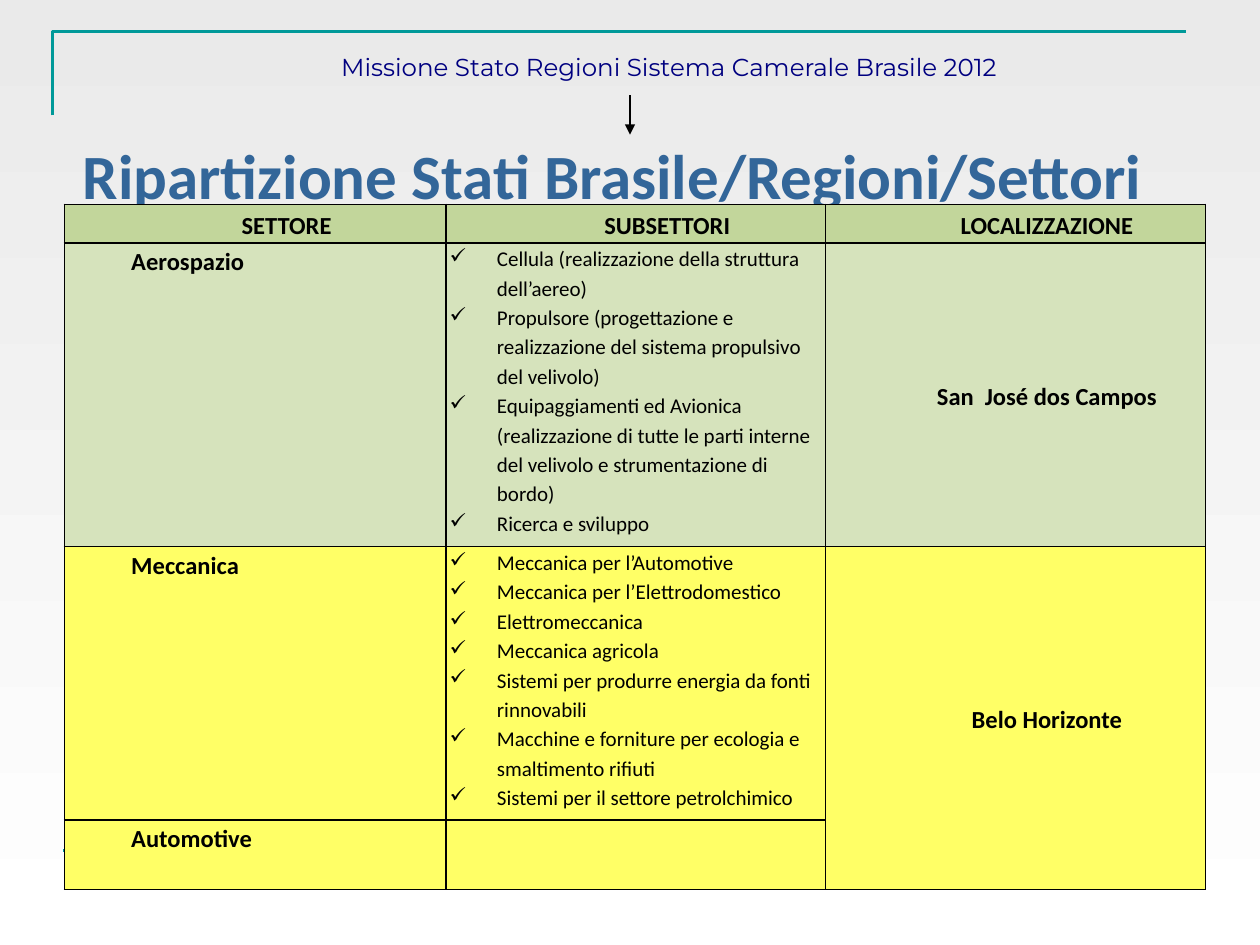
import dataclasses

import lxml.etree
import pptx
import pptx.dml.color
import pptx.enum.shapes
import pptx.enum.text
import pptx.oxml.ns
import pptx.util

Pt = pptx.util.Pt
Align = pptx.enum.text.PP_ALIGN
Anchor = pptx.enum.text.MSO_ANCHOR


@dataclasses.dataclass(frozen=True)
class Theme:
    body_font: str = "Calibri"
    heading_font: str = "Montserrat"
    title_size: int = 36
    label_size: int = 14
    item_size: int = 12
    background_top: str = "EAEAEA"
    background_bottom: str = "FFFFFF"
    frame: str = "009999"
    heading: str = "000080"
    title: str = "336699"
    ink: str = "000000"
    header_fill: str = "C2D69B"
    green_fill: str = "D6E3BC"
    yellow_fill: str = "FFFF66"


def color(value):
    return pptx.dml.color.RGBColor.from_string(value)


def add_xml(parent, tag, **attributes):
    return lxml.etree.SubElement(parent, pptx.oxml.ns.qn(tag), attributes)


class SlideBuilder:
    def __init__(self, slide, theme):
        self.slide = slide
        self.theme = theme

    def background(self):
        fill = self.slide.background.fill
        fill.gradient()
        fill.gradient_angle = 270
        stops = (self.theme.background_top, self.theme.background_bottom)
        for stop, value in zip(fill.gradient_stops, stops):
            stop.color.rgb = color(value)

    def run(self, paragraph, text, size, value, font=None, bold=False):
        run = paragraph.add_run()
        run.text = text
        run.font.name = font or self.theme.body_font
        run.font.size = Pt(size)
        run.font.bold = bold
        run.font.color.rgb = color(value)

    def place(self, shape, left, top, width, height):
        shape.left, shape.top = Pt(left), Pt(top)
        shape.width, shape.height = Pt(width), Pt(height)

    def title(self, text, *box):
        shape = self.slide.shapes.title
        self.place(shape, *box)
        frame = shape.text_frame
        frame.auto_size = pptx.enum.text.MSO_AUTO_SIZE.NONE
        frame.word_wrap = False
        frame.vertical_anchor = Anchor.MIDDLE
        frame.margin_left = frame.margin_right = 0
        frame.margin_top = frame.margin_bottom = 0
        paragraph = frame.paragraphs[0]
        paragraph.alignment = Align.CENTER
        self.run(paragraph, text, self.theme.title_size, self.theme.title, bold=True)

    def heading(self, text, *box):
        shape = self.slide.shapes.add_textbox(*map(Pt, box))
        shape.text_frame.word_wrap = True
        paragraph = shape.text_frame.paragraphs[0]
        paragraph.alignment = Align.CENTER
        self.run(paragraph, text, self.theme.label_size, self.theme.heading,
                 self.theme.heading_font)

    def corner(self, start, *points):
        builder = self.slide.shapes.build_freeform(*map(Pt, start))
        builder.add_line_segments([tuple(map(Pt, point)) for point in points], close=False)
        shape = builder.convert_to_shape()
        shape.shadow.inherit = False
        shape.fill.background()
        shape.line.color.rgb = color(self.theme.frame)
        shape.line.width = Pt(1.5)

    def line(self, start, end, value, width, arrow=False):
        connector = self.slide.shapes.add_connector(
            pptx.enum.shapes.MSO_CONNECTOR.STRAIGHT, *map(Pt, start + end))
        connector.line.color.rgb = color(value)
        connector.line.width = Pt(width)
        if arrow:
            add_xml(connector.line._get_or_add_ln(), "a:tailEnd", type="triangle")
        add_xml(connector._element.spPr, "a:effectLst")

    def table(self, left, top, columns, rows):
        frame = self.slide.shapes.add_table(
            len(rows), len(columns), Pt(left), Pt(top), Pt(sum(columns)), Pt(sum(rows)))
        table = frame.table
        table.first_row = table.horz_banding = False
        for column, width in zip(table.columns, columns):
            column.width = Pt(width)
        for row, height in zip(table.rows, rows):
            row.height = Pt(height)
        return table

    def style_cell(self, cell, fill):
        properties = cell._tc.get_or_add_tcPr()
        for side in ("a:lnL", "a:lnR", "a:lnT", "a:lnB"):
            border = add_xml(properties, side, w=str(Pt(1)))
            add_xml(add_xml(border, "a:solidFill"), "a:srgbClr", val=self.theme.ink)
        cell.fill.solid()
        cell.fill.fore_color.rgb = color(fill)
        cell.margin_left = cell.margin_right = Pt(2.2)
        cell.margin_top = cell.margin_bottom = 0

    def indent(self, paragraph, margin, first):
        paragraph.line_spacing = 1.15
        properties = paragraph._p.get_or_add_pPr()
        properties.set("marL", str(Pt(margin)))
        properties.set("indent", str(Pt(first)))
        return properties

    def label(self, cell, text, centered=False):
        paragraph = cell.text_frame.paragraphs[0]
        self.indent(paragraph, 36, 0)
        if centered:
            paragraph.alignment = Align.CENTER
            cell.vertical_anchor = Anchor.MIDDLE
        self.run(paragraph, text, self.theme.label_size, self.theme.ink, bold=True)

    def checklist(self, cell, items):
        frame = cell.text_frame
        for index, item in enumerate(items):
            paragraph = frame.add_paragraph() if index else frame.paragraphs[0]
            add_xml(self.indent(paragraph, 27, -27), "a:buChar", char="✓")
            self.run(paragraph, item, self.theme.item_size, self.theme.ink)


HEADERS = ("SETTORE", "SUBSETTORI", "LOCALIZZAZIONE")
SECTORS = (
    ("Aerospazio", (
        "Cellula (realizzazione della struttura dell’aereo)",
        "Propulsore (progettazione e realizzazione del sistema propulsivo del velivolo)",
        "Equipaggiamenti ed Avionica (realizzazione di tutte le parti interne "
        "del velivolo e strumentazione di bordo)",
        "Ricerca e sviluppo"), "San  José dos Campos"),
    ("Meccanica", (
        "Meccanica per l’Automotive",
        "Meccanica per l’Elettrodomestico",
        "Elettromeccanica",
        "Meccanica agricola",
        "Sistemi per produrre energia da fonti rinnovabili",
        "Macchine e forniture per ecologia e smaltimento rifiuti",
        "Sistemi per il settore petrolchimico"), "Belo Horizonte"),
    ("Automotive", (), None),
)


def main():
    presentation = pptx.Presentation()
    presentation.slide_width, presentation.slide_height = Pt(720), Pt(540)
    theme = Theme()
    slide = presentation.slides.add_slide(presentation.slide_layouts[5])
    builder = SlideBuilder(slide, theme)

    builder.background()
    builder.corner((30, 66), (30, 18), (678, 18))
    builder.line((36, 486), (684, 486), theme.frame, 1.5)
    builder.heading("Missione Stato Regioni Sistema Camerale Brasile 2012", 127.5, 26, 510, 22)
    builder.line((360, 54.5), (360, 77), theme.ink, 0.75, arrow=True)
    builder.title("Ripartizione Stati Brasile/Regioni/Settori", 40, 77.8, 620, 44)

    table = builder.table(36.8, 116.8, (218, 217, 217), (22, 173.6, 156.2, 39.6))
    fills = (theme.header_fill, theme.green_fill, theme.yellow_fill, theme.yellow_fill)
    for row, fill in zip(table.rows, fills):
        for cell in row.cells:
            builder.style_cell(cell, fill)
    table.cell(2, 2).merge(table.cell(3, 2))
    for column, text in enumerate(HEADERS):
        builder.label(table.cell(0, column), text, centered=True)
    for row, (sector, items, place) in enumerate(SECTORS, start=1):
        builder.label(table.cell(row, 0), sector)
        builder.checklist(table.cell(row, 1), items)
        if place:
            builder.label(table.cell(row, 2), place, centered=True)

    presentation.save("out.pptx")


if __name__ == "__main__":
    main()
